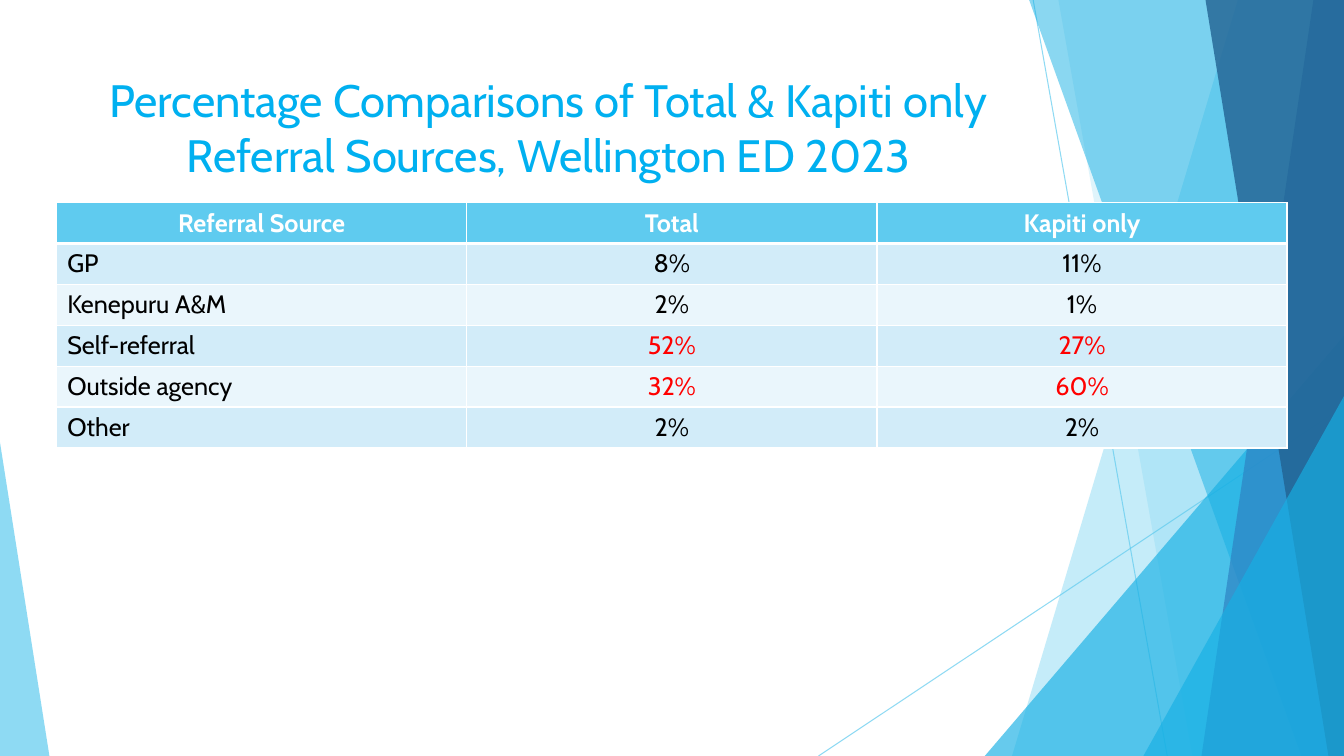
import pptx
import pptx.dml.color
import pptx.enum.shapes
import pptx.enum.text
import pptx.oxml
import pptx.oxml.ns
import pptx.util
from lxml import etree

Pt = pptx.util.Pt
WIDTH, HEIGHT = 960, 540
FONT = "Cabin"
COLORS = {
    "sky": "5FCBEF",
    "cyan": "17B0E4",
    "blue": "2E83C3",
    "navy": "226292",
    "title": "00B0F0",
    "white": "FFFFFF",
    "black": "000000",
    "highlight": "FF0000",
    "odd_row": "D2ECF9",
    "even_row": "EAF6FC",
}
REFERRALS = [
    ("Referral Source", "Total", "Kapiti only"),
    ("GP", "8%", "11%"),
    ("Kenepuru A&M", "2%", "1%"),
    ("Self-referral", "52%", "27%"),
    ("Outside agency", "32%", "60%"),
    ("Other", "2%", "2%"),
]
HIGHLIGHTED_ROWS = ("Self-referral", "Outside agency")
# Top left x, bottom left x, colour, opacity; each band runs to the right edge
BANDS = [
    (884.16, 722.88, "sky", 36),
    (756, 851.76, "sky", 20),
    (735.12, 929.52, "cyan", 50),
    (938.16, 858.24, "blue", 70),
    (861.12, 948.96, "navy", 80),
]


def rgb(name):
    return pptx.dml.color.RGBColor.from_string(COLORS[name])


def set_opacity(fill_owner, percent):
    """Add an alpha value to the solid colour of a shape or line."""
    color = fill_owner.find(".//" + pptx.oxml.ns.qn("a:srgbClr"))
    alpha = etree.SubElement(color, pptx.oxml.ns.qn("a:alpha"))
    alpha.set("val", str(percent * 1000))


def paint(shape, color, opacity):
    shape.shadow.inherit = False
    shape.fill.solid()
    shape.fill.fore_color.rgb = rgb(color)
    shape.line.fill.background()
    set_opacity(shape.element.spPr, opacity)


def add_thin_line(slide, start, end):
    line = slide.shapes.add_connector(
        pptx.enum.shapes.MSO_CONNECTOR.STRAIGHT, *map(Pt, start + end))
    line.line.color.rgb = rgb("sky")
    line.line.width = Pt(0.75)
    properties = line.element.spPr
    set_opacity(properties, 70)
    etree.SubElement(properties, pptx.oxml.ns.qn("a:effectLst"))


def add_band(slide, top_x, bottom_x, color, opacity):
    corners = [(WIDTH, 0), (WIDTH, HEIGHT), (bottom_x, HEIGHT)]
    builder = slide.shapes.build_freeform(Pt(top_x), 0)
    builder.add_line_segments([(Pt(x), Pt(y)) for x, y in corners], close=True)
    paint(builder.convert_to_shape(), color, opacity)


def add_corner(slide, left, top, width, apex, color, opacity):
    """Add a triangle that stands on the bottom edge of the slide."""
    triangle = slide.shapes.add_shape(
        pptx.enum.shapes.MSO_SHAPE.ISOSCELES_TRIANGLE,
        Pt(left), Pt(top), Pt(width), Pt(HEIGHT - top))
    triangle.adjustments[0] = apex
    paint(triangle, color, opacity)


def add_decoration(slide):
    add_thin_line(slide, (738, 0), (833.76, HEIGHT))
    add_thin_line(slide, (WIDTH, 290.16), (584.64, HEIGHT))
    for band in BANDS[:2]:
        add_band(slide, *band)
    add_corner(slide, 703.44, 239.76, 256.56, 1, "cyan", 66)
    for band in BANDS[2:]:
        add_band(slide, *band)
    add_corner(slide, 816.72, 282.96, 143.28, 1, "cyan", 66)
    add_corner(slide, 0, 316.08, 35.28, 0, "sky", 70)


def format_text(paragraph, size, color, centered, bold=False):
    paragraph.font.name = FONT
    paragraph.font.size = Pt(size)
    paragraph.font.bold = bold
    paragraph.font.color.rgb = rgb(color)
    alignment = pptx.enum.text.PP_ALIGN
    paragraph.alignment = alignment.CENTER if centered else alignment.LEFT


def fill_title(slide, text):
    title = slide.shapes.title
    title.left, title.top = Pt(53.28), Pt(48.24)
    title.width, title.height = Pt(676.8), Pt(103.68)
    frame = title.text_frame
    frame.text = text
    frame.word_wrap = True
    frame.auto_size = pptx.enum.text.MSO_AUTO_SIZE.NONE
    frame.vertical_anchor = pptx.enum.text.MSO_ANCHOR.TOP
    frame.paragraphs[0].line_spacing = 1.0
    format_text(frame.paragraphs[0], 32.4, "title", centered=True)
    slide.shapes[-1].element.addnext(title.element)


def set_borders(cell, bottom_width):
    """Draw white borders, 1 point wide except at the bottom."""
    properties = cell._tc.get_or_add_tcPr()
    widths = {"lnL": 1, "lnR": 1, "lnT": 1, "lnB": bottom_width}
    for index, (side, width) in enumerate(widths.items()):
        properties.insert(index, pptx.oxml.parse_xml(
            f'<a:{side} {pptx.oxml.ns.nsdecls("a")} w="{Pt(width)}"><a:solidFill>'
            f'<a:srgbClr val="{COLORS["white"]}"/></a:solidFill></a:{side}>'))


def fill_cell(cell, text, fill, color, centered, header):
    cell.text = text
    cell.margin_left = cell.margin_right = Pt(7.7)
    cell.margin_top = cell.margin_bottom = Pt(3.6)
    cell.fill.solid()
    cell.fill.fore_color.rgb = rgb(fill)
    format_text(cell.text_frame.paragraphs[0], 18, color, centered, bold=header)
    set_borders(cell, 3 if header else 1)


def add_referral_table(slide):
    table = slide.shapes.add_table(
        len(REFERRALS), len(REFERRALS[0]),
        Pt(40.4), Pt(144.8), Pt(879), Pt(29 * len(REFERRALS))).table
    for row_index, texts in enumerate(REFERRALS):
        header = row_index == 0
        fill = "sky" if header else ("even_row", "odd_row")[row_index % 2]
        for column_index, text in enumerate(texts):
            is_value = column_index > 0
            if header:
                color = "white"
            elif is_value and texts[0] in HIGHLIGHTED_ROWS:
                color = "highlight"
            else:
                color = "black"
            fill_cell(table.cell(row_index, column_index), text, fill, color,
                      header or is_value, header)


def main():
    presentation = pptx.Presentation()
    presentation.slide_width, presentation.slide_height = Pt(WIDTH), Pt(HEIGHT)
    slide = presentation.slides.add_slide(presentation.slide_layouts[5])
    add_decoration(slide)
    fill_title(slide, "Percentage Comparisons of Total & Kapiti only "
                      "Referral Sources, Wellington ED 2023")
    add_referral_table(slide)
    presentation.save("out.pptx")


if __name__ == "__main__":
    main()
